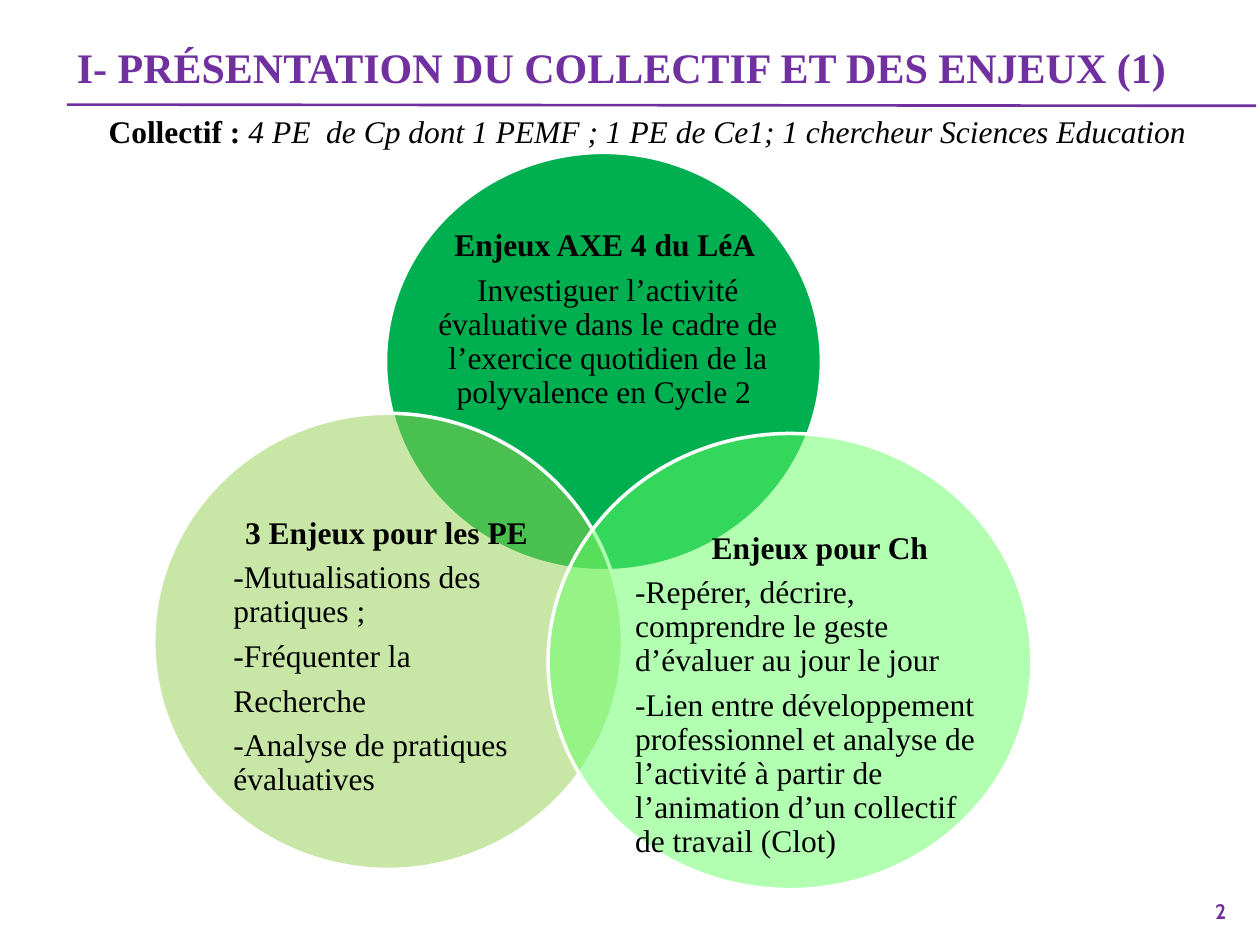
from lxml.etree import SubElement as Sub
from pptx import Presentation
from pptx.dml.color import RGBColor as Rgb
from pptx.enum.shapes import MSO_CONNECTOR as Conn, MSO_SHAPE as Kind
from pptx.enum.text import MSO_ANCHOR as Anchor, PP_ALIGN as Align
from pptx.oxml.ns import qn
from pptx.util import Inches, Pt

HUES = {"violet": "7030A0", "black": "000000", "white": "FFFFFF",
        "green": "00B050", "olive": "92D050", "mint": "66FF66"}
SERIF = "Times New Roman"
GAP = 6

# Each circle: box, fill, opacity, share of the box for its text,
# heading, alignment of the points, points with the space after each.
RINGS = [
    ((3.06, 1.21, 3.46, 3.32), "green", 100, (0.12, 0.14, 0.78, 0.52),
     "Enjeux AXE 4 du LéA ", Align.CENTER,
     [("Investiguer l’activité évaluative dans le cadre de l’exercice "
       "quotidien de la polyvalence en Cycle 2 ", 0)]),
    ((1.22, 3.28, 3.72, 3.62), "olive", 50, (0.17, 0.3, 0.67, 0.47),
     "3 Enjeux pour les PE ", Align.LEFT,
     [("-Mutualisations des pratiques ;", GAP),
      ("-Fréquenter la", GAP),
      ("Recherche", GAP),
      ("-Analyse de pratiques évaluatives", 0)]),
    ((4.35, 3.44, 3.84, 3.62), "mint", 50, (0.18, 0.38, 0.78, 0.39),
     "Enjeux pour Ch ", Align.LEFT,
     [("-Repérer, décrire, comprendre le geste d’évaluer au jour le jour", GAP),
      ("-Lien entre développement professionnel et analyse de l’activité "
       "à partir de l’animation d’un collectif", 0),
      ("de travail (Clot)", 0)]),
]


def hue(name):
    return Rgb.from_string(HUES[name])


def inch(box):
    return [Inches(n) for n in box]


def part(box, share):
    """Return the box that takes the given share of another box."""
    x, y, w, h = box
    a, b, c, d = share
    return x + a * w, y + b * h, c * w, d * h


def add_run(para, text, size=18, tint="black", face=SERIF, bold=False, slant=False):
    run = para.add_run()
    run.text = text
    font = run.font
    font.size, font.name, font.bold, font.italic = Pt(size), face, bold, slant
    font.color.rgb = hue(tint)


def add_box(slide, box, align, pad=None):
    """Add a wrapped text box; return its frame and first paragraph."""
    frame = slide.shapes.add_textbox(*inch(box)).text_frame
    frame.word_wrap = True
    if pad is not None:
        frame.margin_left = frame.margin_right = Inches(pad)
        frame.margin_top = frame.margin_bottom = Inches(pad)
    para = frame.paragraphs[0]
    para.alignment = align
    return frame, para


def add_head(slide, box):
    title = slide.shapes.title
    title.left, title.top, title.width, title.height = inch(box)
    frame = title.text_frame
    frame.word_wrap = True
    frame.vertical_anchor = Anchor.MIDDLE
    para = frame.paragraphs[0]
    para.alignment = Align.LEFT
    add_run(para, "I- PRÉSENTATION DU COLLECTIF ET DES ENJEUX (1)",
            24, "violet", bold=True)


def add_rule(slide, ends):
    rule = slide.shapes.add_connector(Conn.STRAIGHT, *inch(ends))
    rule.line.color.rgb = hue("violet")
    rule.line.width = Pt(1.5)
    Sub(rule.element.spPr, qn("a:effectLst"))


def add_team(slide, box):
    para = add_box(slide, box, Align.CENTER)[1]
    add_run(para, "Collectif : ", bold=True)
    add_run(para, "4 PE  de Cp dont 1 PEMF ; 1 PE de Ce1; "
                  "1 chercheur Sciences Education", slant=True)


def add_ring(slide, box, tint, alpha, share, head, align, points):
    ring = slide.shapes.add_shape(Kind.OVAL, *inch(box))
    ring.shadow.inherit = False
    ring.fill.solid()
    ring.fill.fore_color.rgb = hue(tint)
    if alpha < 100:
        color = ring.element.spPr.find(qn("a:solidFill"))[0]
        Sub(color, qn("a:alpha"), val=str(alpha * 1000))
    ring.line.color.rgb = hue("white")
    ring.line.width = Pt(2)

    frame, para = add_box(slide, part(box, share), Align.CENTER, 0)
    frame.vertical_anchor = Anchor.MIDDLE
    add_run(para, head, bold=True)
    para.space_after = Pt(GAP)
    for text, gap in points:
        para = frame.add_paragraph()
        para.alignment = align
        para.space_after = Pt(gap)
        add_run(para, text)
    for para in frame.paragraphs:
        para.line_spacing = 0.9


def add_page(slide, box):
    para = add_box(slide, box, Align.RIGHT)[1]
    add_run(para, "2", 12, "violet", "Cabin", bold=True)


def main():
    deck = Presentation()
    deck.slide_width, deck.slide_height = Inches(10), Inches(7.5)
    slide = deck.slides.add_slide(deck.slide_layouts[5])
    add_rule(slide, (0.53, 0.83, 9.97, 0.84))
    add_team(slide, (0.28, 0.84, 9.72, 0.4))
    add_head(slide, (0.51, 0.28, 9.49, 0.5))
    for ring in RINGS:
        add_ring(slide, *ring)
    add_page(slide, (9, 7.08, 0.83, 0.27))
    deck.save("out.pptx")


if __name__ == "__main__":
    main()
